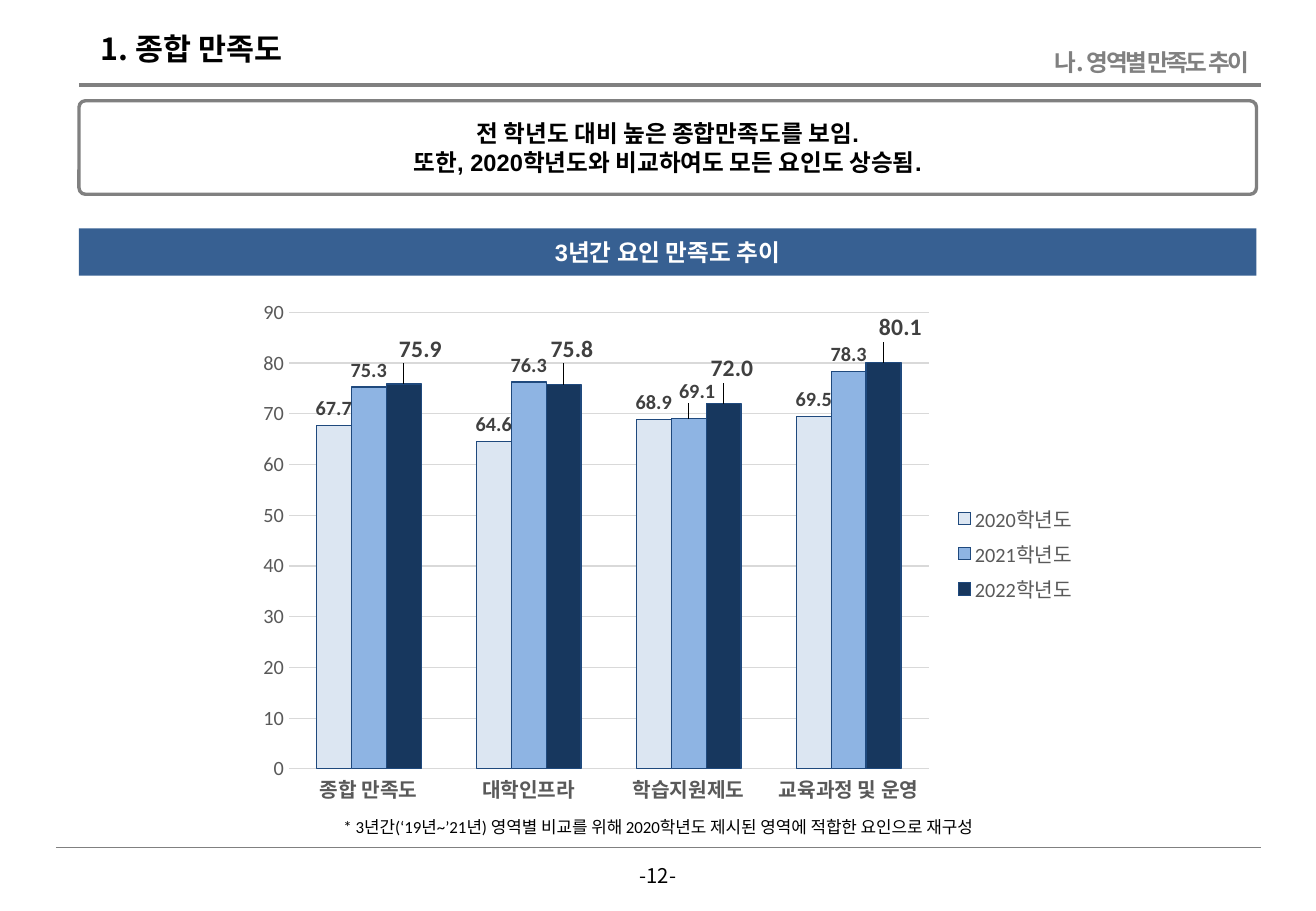
"""Build the slide on three-year satisfaction trends."""
from copy import deepcopy

from lxml import etree
from pptx import Presentation
from pptx import util as u
from pptx.chart import data as cd
from pptx.dml import color
from pptx.enum import chart as ch
from pptx.enum import shapes, text
from pptx.oxml import parse_xml
from pptx.oxml import ns

COLORS = dict(
    black="000000", white="FFFFFF", gray="808080", banner="376092",
    axis="595959", label="404040", grid="D9D9D9", edge="1F497D",
)
NOTO = "Noto Sans CJK KR"
YEARS = [
    ("2020학년도", (67.7, 64.6, 68.9, 69.5), "DCE6F2", 12, {}),
    ("2021학년도", (75.3, 76.3, 69.1, 78.3), "8EB4E3", 12, {2: (0.01, -0.02)}),
    ("2022학년도", (75.9, 75.8, 72.0, 80.1), "17375E", 14,
     {0: (0.02, -0.03), 1: (0.01, -0.03), 2: (0.01, -0.03), 3: (0.02, -0.03)}),
]
AREAS = ["종합 만족도", "대학인프라", "학습지원제도", "교육과정 및 운영"]


def rgb(name):
    return color.RGBColor.from_string(COLORS.get(name, name))


def style_font(font, size, name="Calibri", fill="black", bold=False):
    font.size, font.bold = u.Pt(size), bold
    font.color.rgb = rgb(fill)
    font.name = name


def write(sp, content, align="CENTER", anchor="MIDDLE", wrap=True, spacing=None, **style):
    tf = sp.text_frame
    tf.auto_size = text.MSO_AUTO_SIZE.NONE
    tf.word_wrap = wrap
    tf.vertical_anchor = text.MSO_ANCHOR[anchor]
    for i, line in enumerate(content.split("\n")):
        p = tf.add_paragraph() if i else tf.paragraphs[0]
        p.alignment = text.PP_ALIGN[align]
        p.space_before = u.Pt(0)
        r = p.add_run()
        r.text = line
        style_font(r.font, **style)
        rpr = r.font._element
        etree.SubElement(rpr, ns.qn("a:ea")).set("typeface", NOTO)
        if spacing:
            rpr.set("spc", str(int(spacing * 100)))


def manual_layout(x, y, w=None, h=None):
    size = f'<c:w val="{w}"/><c:h val="{h}"/>' if w else ""
    modes = ('<c:layoutTarget val="inner"/><c:xMode val="edge"/><c:yMode val="edge"/>'
             if w else "")
    return parse_xml(
        f'<c:layout {ns.nsdecls("c")}><c:manualLayout>{modes}'
        f'<c:x val="{x}"/><c:y val="{y}"/>{size}</c:manualLayout></c:layout>')


def move_label(labels, idx, offset):
    root = labels._element
    dlbl = parse_xml(f'<c:dLbl {ns.nsdecls("c")}><c:idx val="{idx}"/></c:dLbl>')
    dlbl.append(manual_layout(*offset))
    for child in root:
        if child.tag not in (ns.qn("c:dLbl"), ns.qn("c:showLeaderLines")):
            dlbl.append(deepcopy(child))
    root.insert(idx if len(root.findall(ns.qn("c:dLbl"))) >= idx else 0, dlbl)


class Deck:
    def __init__(self, width, height):
        self.prs = Presentation()
        self.prs.slide_width, self.prs.slide_height = u.Inches(width), u.Inches(height)
        self.s = self.prs.slides.add_slide(self.prs.slide_layouts[0])

    def box(self, *at):
        return [u.Inches(v) for v in at]

    def placeholder(self, idx, at, content, **style):
        sp = self.s.placeholders[idx]
        sp.left, sp.top, sp.width, sp.height = self.box(*at)
        write(sp, content, name=NOTO, bold=True, **style)

    def label(self, at, content, **style):
        write(self.s.shapes.add_textbox(*self.box(*at)), content, **style)

    def rule(self, x1, x2, y, width):
        line = self.s.shapes.add_connector(
            shapes.MSO_CONNECTOR.STRAIGHT, *self.box(x1, y, x2, y))
        line.line.color.rgb = rgb("gray")
        line.line.width = u.Pt(width)
        etree.SubElement(line._element.spPr, ns.qn("a:effectLst"))

    def panel(self, kind, at, content, fill, ink, line=None):
        sp = self.s.shapes.add_shape(shapes.MSO_SHAPE[kind], *self.box(*at))
        sp.shadow.inherit = False
        sp.fill.solid()
        sp.fill.fore_color.rgb = rgb(fill)
        if line:
            sp.adjustments[0] = 0.07
            sp.line.color.rgb = rgb(line)
            sp.line.width = u.Pt(2)
        else:
            sp.line.fill.background()
        write(sp, content, size=14, name="Arial", fill=ink, bold=True)

    def chart(self, at):
        data = cd.CategoryChartData(number_format="0.0")
        data.categories = AREAS
        for name, values, *_ in YEARS:
            data.add_series(name, values)
        chart = self.s.shapes.add_chart(
            ch.XL_CHART_TYPE.COLUMN_CLUSTERED, *self.box(*at), data).chart
        style_font(chart.font, 10)
        chart.has_title = False
        chart.has_legend = True
        chart.legend.position = ch.XL_LEGEND_POSITION.RIGHT
        chart.legend.include_in_layout = False
        style_font(chart.legend.font, 12, fill="axis")
        for axis, bold in ((chart.category_axis, True), (chart.value_axis, False)):
            axis.major_tick_mark = axis.minor_tick_mark = ch.XL_TICK_MARK.NONE
            axis.format.line.fill.background()
            style_font(axis.tick_labels.font, 12, fill="axis", bold=bold)
        axis = chart.value_axis
        axis.minimum_scale, axis.maximum_scale, axis.major_unit = 0, 90, 10
        axis.tick_labels.number_format = "0"
        axis.tick_labels.number_format_is_linked = False
        axis.major_gridlines.format.line.color.rgb = rgb("grid")
        axis.major_gridlines.format.line.width = u.Pt(0.75)
        plot = chart.plots[0]
        plot.gap_width, plot.overlap, plot.vary_by_categories = 158, 0, False
        for ser, (_, _, fill, size, offsets) in zip(plot.series, YEARS):
            ser.format.fill.solid()
            ser.format.fill.fore_color.rgb = rgb(fill)
            ser.format.line.color.rgb = rgb("edge")
            ser.format.line.width = u.Pt(0.75)
            labels = ser.data_labels
            labels.show_value = True
            labels.number_format, labels.number_format_is_linked = "0.0", False
            labels.position = ch.XL_LABEL_POSITION.OUTSIDE_END
            style_font(labels.font, size, fill="label", bold=True)
            for idx, offset in offsets.items():
                move_label(labels, idx, offset)
        area = chart._chartSpace.chart.plotArea
        for old in area.findall(ns.qn("c:layout")):
            area.remove(old)
        area.insert(0, manual_layout(0.05, 0.04, 0.76, 0.87))


def main():
    deck = Deck(10.83, 7.5)
    deck.rule(0.65, 10.38, 0.7, 2)
    deck.rule(0.46, 10.38, 6.98, 0.5)
    deck.placeholder(0, (0.73, 0.2, 2.1, 0.4), "1. 종합 만족도", align="LEFT", size=18)
    deck.placeholder(1, (8.37, 0.34, 2.01, 0.34), "나. 영역별 만족도 추이",
                     align="RIGHT", size=14, fill="gray", spacing=-1.5)
    deck.label((5.14, 7.06, 0.55, 0.3), "-12-", wrap=False, size=12, name=NOTO)
    deck.panel("RECTANGLE", (0.65, 1.88, 9.69, 0.39), "3년간 요인 만족도 추이",
               "banner", "white")
    deck.panel("ROUNDED_RECTANGLE", (0.65, 0.83, 9.69, 0.77),
               "전 학년도 대비 높은 종합만족도를 보임.\n"
               "또한, 2020학년도와 비교하여도 모든 요인도 상승됨.",
               "white", "black", line="gray")
    deck.chart((2.03, 2.4, 6.93, 4.32))
    deck.label((0.57, 6.67, 9.69, 0.27),
               "* 3년간(‘19년~’21년) 영역별 비교를 위해 2020학년도 제시된 영역에 적합한 요인으로 재구성",
               size=10)
    deck.prs.save("out.pptx")


if __name__ == "__main__":
    main()
